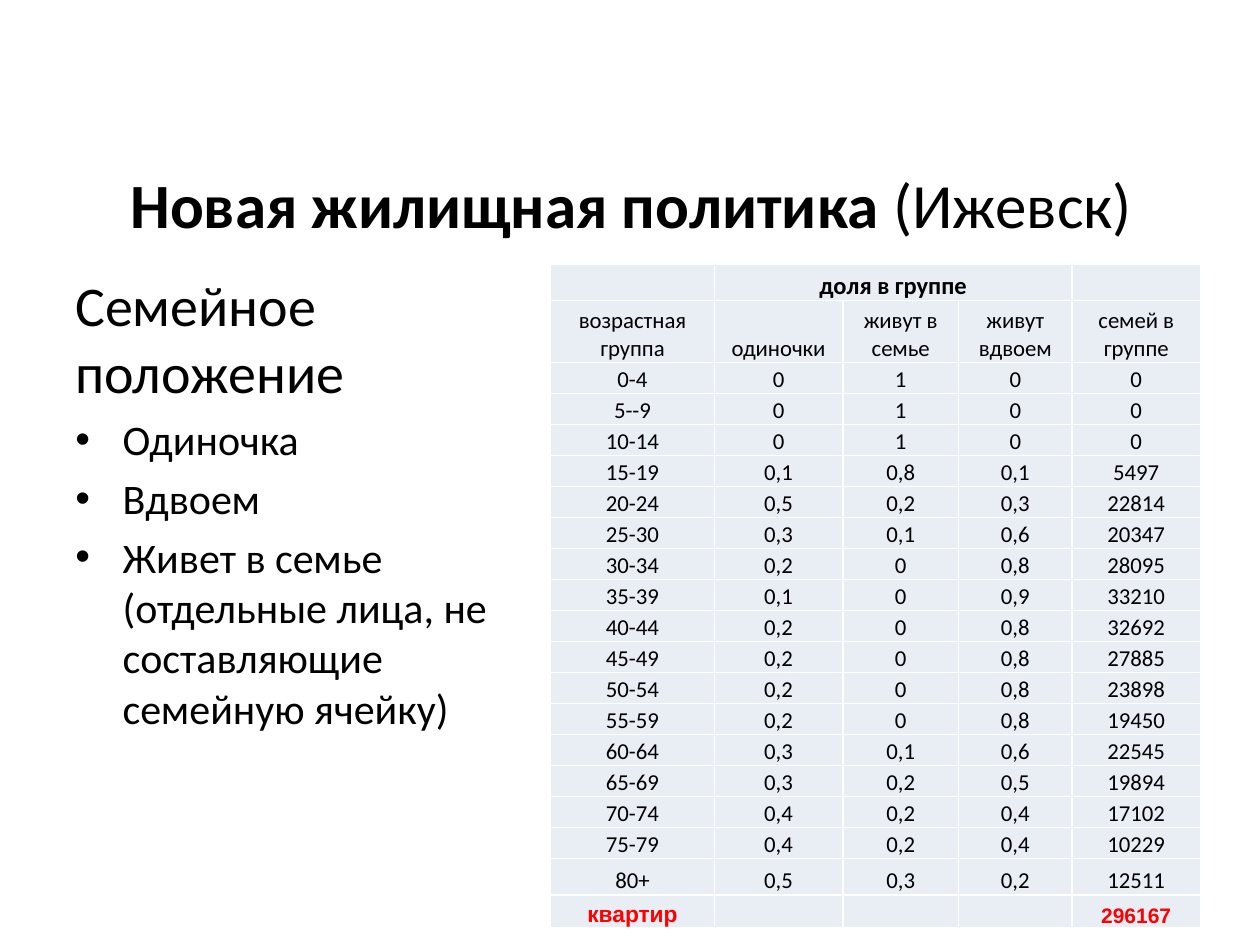
from lxml import etree
from pptx import Presentation
from pptx import util as u
from pptx.dml.color import RGBColor
from pptx.enum import text
from pptx.oxml import ns

BLACK, RED, WHITE, CELL_FILL = "000000", "FF0000", "FFFFFF", "E9EDF4"
BULLETS = ["Одиночка", "Вдвоем",
           "Живет в семье (отдельные лица, не составляющие семейную ячейку)"]
COLUMN_WIDTHS = [93.6, 73.4, 66.2, 64.8, 73.4]
HEADINGS = ["возрастная группа", "одиночки", "живут в семье",
            "живут вдвоем", "семей в группе"]
AGE_GROUPS = """
0-4 0 1 0 0
5--9 0 1 0 0
10-14 0 1 0 0
15-19 0,1 0,8 0,1 5497
20-24 0,5 0,2 0,3 22814
25-30 0,3 0,1 0,6 20347
30-34 0,2 0 0,8 28095
35-39 0,1 0 0,9 33210
40-44 0,2 0 0,8 32692
45-49 0,2 0 0,8 27885
50-54 0,2 0 0,8 23898
55-59 0,2 0 0,8 19450
60-64 0,3 0,1 0,6 22545
65-69 0,3 0,2 0,5 19894
70-74 0,4 0,2 0,4 17102
75-79 0,4 0,2 0,4 10229
80+ 0,5 0,3 0,2 12511
"""


def color(value):
    return RGBColor.from_string(value)


def add_element(parent, tag, **attributes):
    return etree.SubElement(parent, ns.qn(tag), attributes)


def set_font(font, size, name="Calibri", fill=BLACK, bold=False):
    font.size, font.name, font.bold = u.Pt(size), name, bold
    font.color.rgb = color(fill)


def add_box(page, left, top, width, height, anchor):
    box = page.shapes.add_textbox(u.Pt(left), u.Pt(top), u.Pt(width), u.Pt(height))
    frame = box.text_frame
    frame.word_wrap = True
    frame.vertical_anchor = anchor
    return frame


def add_title(page):
    para = add_box(page, 36.7, 71.3, 648, 90, text.MSO_ANCHOR.MIDDLE).paragraphs[0]
    para.alignment = text.PP_ALIGN.CENTER
    for words, bold in [("Новая жилищная политика ", True), ("(Ижевск)", False)]:
        span = para.add_run()
        span.text = words
        set_font(span.font, 36, bold=bold)


def add_bullet(frame, words):
    para = frame.add_paragraph()
    para.text = words
    para.space_before = u.Pt(4.8)
    properties = para._p.get_or_add_pPr()
    properties.set("marL", str(u.Pt(27)))
    properties.set("indent", str(u.Pt(-27)))
    add_element(properties, "a:buFont", typeface="Arial")
    add_element(properties, "a:buChar", char="•")
    set_font(para.font, 24)


def add_family_status(page):
    frame = add_box(page, 36, 151.2, 290.2, 331.2, text.MSO_ANCHOR.TOP)
    heading = frame.paragraphs[0]
    heading.text = "Семейное положение"
    set_font(heading.font, 32)
    for words in BULLETS:
        add_bullet(frame, words)


def add_borders(cell):
    properties = cell._tc.get_or_add_tcPr()
    for position, side in enumerate(["a:lnL", "a:lnR", "a:lnT", "a:lnB"]):
        line = etree.Element(ns.qn(side), w=str(u.Pt(1)))
        add_element(add_element(line, "a:solidFill"), "a:srgbClr", val=WHITE)
        properties.insert(position, line)


def fill_cell(cell, words, size=13, **style):
    cell.margin_left = cell.margin_right = cell.margin_top = cell.margin_bottom = 0
    cell.vertical_anchor = text.MSO_ANCHOR.BOTTOM
    cell.fill.solid()
    cell.fill.fore_color.rgb = color(CELL_FILL)
    add_borders(cell)
    para = cell.text_frame.paragraphs[0]
    para.alignment = text.PP_ALIGN.CENTER
    if words:
        para.text = words
        set_font(para.font, size, **style)
    else:  # keeps the empty line from stretching its row
        add_element(para._p, "a:endParaRPr", sz="1200")


def add_age_table(page):
    groups = [line.split() for line in AGE_GROUPS.strip().splitlines()]
    rows = [["", "доля в группе", "", "", ""], HEADINGS, *groups,
            ["квартир", "", "", "", "296167"]]
    heights = [20.6, 35.3] + [17.72] * (len(groups) - 1) + [20.8, 18.7]
    table = page.shapes.add_table(
        len(rows), len(COLUMN_WIDTHS), u.Pt(314.6), u.Pt(151.2),
        u.Pt(sum(COLUMN_WIDTHS)), u.Pt(sum(heights))).table
    table.first_row = table.horz_banding = False
    for column, width in zip(table.columns, COLUMN_WIDTHS):
        column.width = u.Pt(width)
    last = len(rows) - 1
    for r, (words, height) in enumerate(zip(rows, heights)):
        table.rows[r].height = u.Pt(height)
        for c, word in enumerate(words):
            style = {}
            if r == 0:
                style = dict(size=14, bold=True)
            elif r == last:
                style = dict(size=13 if c == 0 else 12, name="Arial",
                             fill=RED, bold=True)
            fill_cell(table.cell(r, c), word, **style)
    table.cell(0, 1).merge(table.cell(0, 3))


def main():
    deck = Presentation()
    deck.slide_width, deck.slide_height = u.Pt(720), u.Pt(540)
    page = deck.slides.add_slide(deck.slide_layouts[6])
    add_title(page)
    add_family_status(page)
    add_age_table(page)
    deck.save("out.pptx")


if __name__ == "__main__":
    main()
